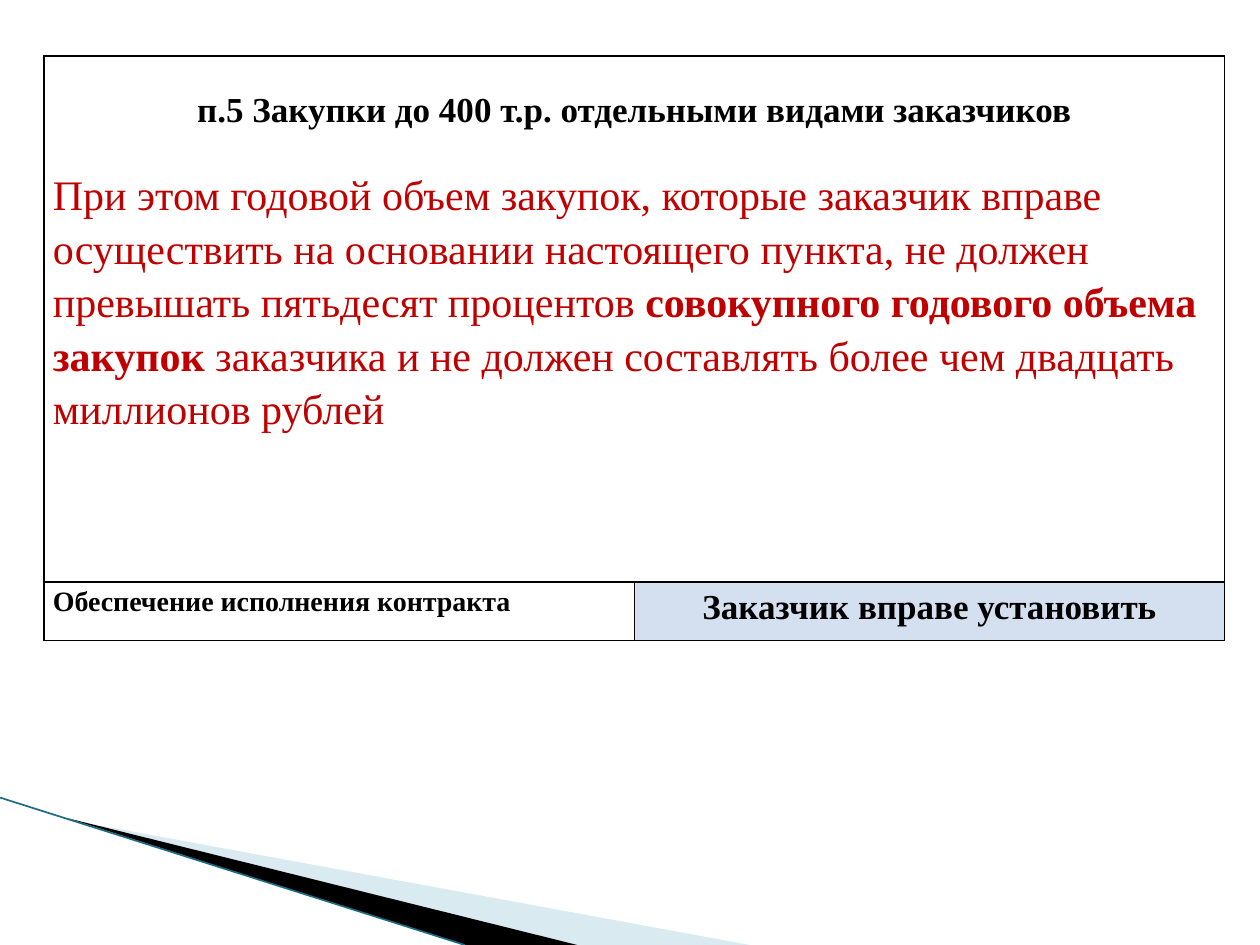
from lxml import etree
from pptx import Presentation
from pptx.dml.color import RGBColor
from pptx.enum.shapes import MSO_CONNECTOR
from pptx.enum.text import PP_ALIGN
from pptx.oxml.ns import qn
from pptx.util import Inches, Pt

LEFT, CENTER = PP_ALIGN.LEFT, PP_ALIGN.CENTER
STRAIGHT = MSO_CONNECTOR.STRAIGHT
FONT = "Times New Roman"
BLACK, RED, BLUE = "000000", "C00000", "D4DFEF"
PALE, TEAL = "A0CBDC", "1B6B82"
W, H = Inches(10), Inches(7.5)


def rgb(value):
    """Turn a hex string into a colour."""
    return RGBColor.from_string(value)


def add_text(p, text, size=20, color=BLACK, bold=False):
    """Append a formatted run to a paragraph."""
    r = p.add_run()
    r.text = text
    r.font.name, r.font.size, r.font.bold = FONT, Pt(size), bold
    r.font.color.rgb = rgb(color)


def style_cell(cell, fill=None, top=0):
    """Set the margins, fill and thin black borders of a cell."""
    cell.margin_left = cell.margin_right = Inches(0.07)
    cell.margin_top, cell.margin_bottom = Inches(top), 0
    tcPr = cell._tc.get_or_add_tcPr()
    for side in ("a:lnL", "a:lnR", "a:lnT", "a:lnB"):
        ln = etree.SubElement(tcPr, qn(side), w=str(Pt(1)))
        solid = etree.SubElement(ln, qn("a:solidFill"))
        etree.SubElement(solid, qn("a:srgbClr"), val=BLACK)
    if fill:
        cell.fill.solid()
        cell.fill.fore_color.rgb = rgb(fill)
    else:
        cell.fill.background()


def add_wedge(slide, box, points, color, alpha=100):
    """Draw a filled outline from points given as shares of a box."""
    x, y, w, h = box
    pts = [(int(x + w * px), int(y + h * py)) for px, py in points]
    fb = slide.shapes.build_freeform(*pts[0])
    fb.add_line_segments(pts[1:], close=True)
    sp = fb.convert_to_shape()
    sp.shadow.inherit = False
    sp.fill.solid()
    sp.fill.fore_color.rgb = rgb(color)
    sp.line.fill.background()
    clr = sp.fill._xPr.find(".//" + qn("a:srgbClr"))
    etree.SubElement(clr, qn("a:alpha"), val=str(alpha * 1000))


def add_corner(slide, box):
    """Draw the wedges and the edge line of the lower left corner."""
    x, y, w, h = box
    add_wedge(slide, box, [(0.09, 0.15), (1, 1), (0.77, 1)], PALE, 40)
    add_wedge(slide, box, [(0.09, 0.14), (0.77, 1), (0.62, 1)], BLACK)
    line = slide.shapes.add_connector(
        STRAIGHT, x, y, int(x + w * 0.62), y + h)
    line.line.color.rgb = rgb(TEAL)
    line.line.width = Pt(0.95)
    etree.SubElement(line._element.spPr, qn("a:effectLst"))


def add_rule_table(slide, box):
    """Place the table with the purchase rule and the contract security."""
    x, y, w, h = box
    table = slide.shapes.add_table(2, 2, x, y, w, h).table
    table.first_row = table.horz_banding = False
    for col in table.columns:
        col.width = w // 2
    for row, share in zip(table.rows, (0.9, 0.1)):
        row.height = int(h * share)
    rule, label, value = table.cell(0, 0), table.cell(1, 0), table.cell(1, 1)
    rule.merge(table.cell(0, 1))
    style_cell(rule, top=0.28)
    style_cell(table.cell(0, 1))
    style_cell(label)
    style_cell(value, BLUE)

    p = rule.text_frame.paragraphs[0]
    p.alignment = CENTER
    add_text(p, "п.5 Закупки до 400 т.р. отдельными видами заказчиков", bold=True)
    p = rule.text_frame.add_paragraph()
    p.line_spacing, p.space_before = 1.15, Pt(21)
    for text, bold in (
        ("При этом годовой объем закупок, которые заказчик вправе осуществить "
         "на основании настоящего пункта, не должен превышать пятьдесят "
         "процентов ", False),
        ("совокупного годового объема закупок ", True),
        ("заказчика и не должен составлять более чем двадцать миллионов "
         "рублей", False),
    ):
        add_text(p, text, size=24, color=RED, bold=bold)

    for cell, text, size, align in (
        (label, "Обеспечение исполнения контракта", 16, LEFT),
        (value, "Заказчик вправе установить", 20, CENTER),
    ):
        p = cell.text_frame.paragraphs[0]
        p.alignment, p.line_spacing = align, 1.15
        add_text(p, text, size=size, bold=True)


def main():
    """Build the slide and save it."""
    prs = Presentation()
    prs.slide_width, prs.slide_height = W, H
    slide = prs.slides.add_slide(prs.slide_layouts[6])
    add_corner(slide, (0, int(H * 0.844), int(W * 0.595), int(H * 0.156)))
    add_rule_table(
        slide, (int(W * 0.035), int(H * 0.059), int(W * 0.937), int(H * 0.619)))
    prs.save("out.pptx")


if __name__ == "__main__":
    main()
